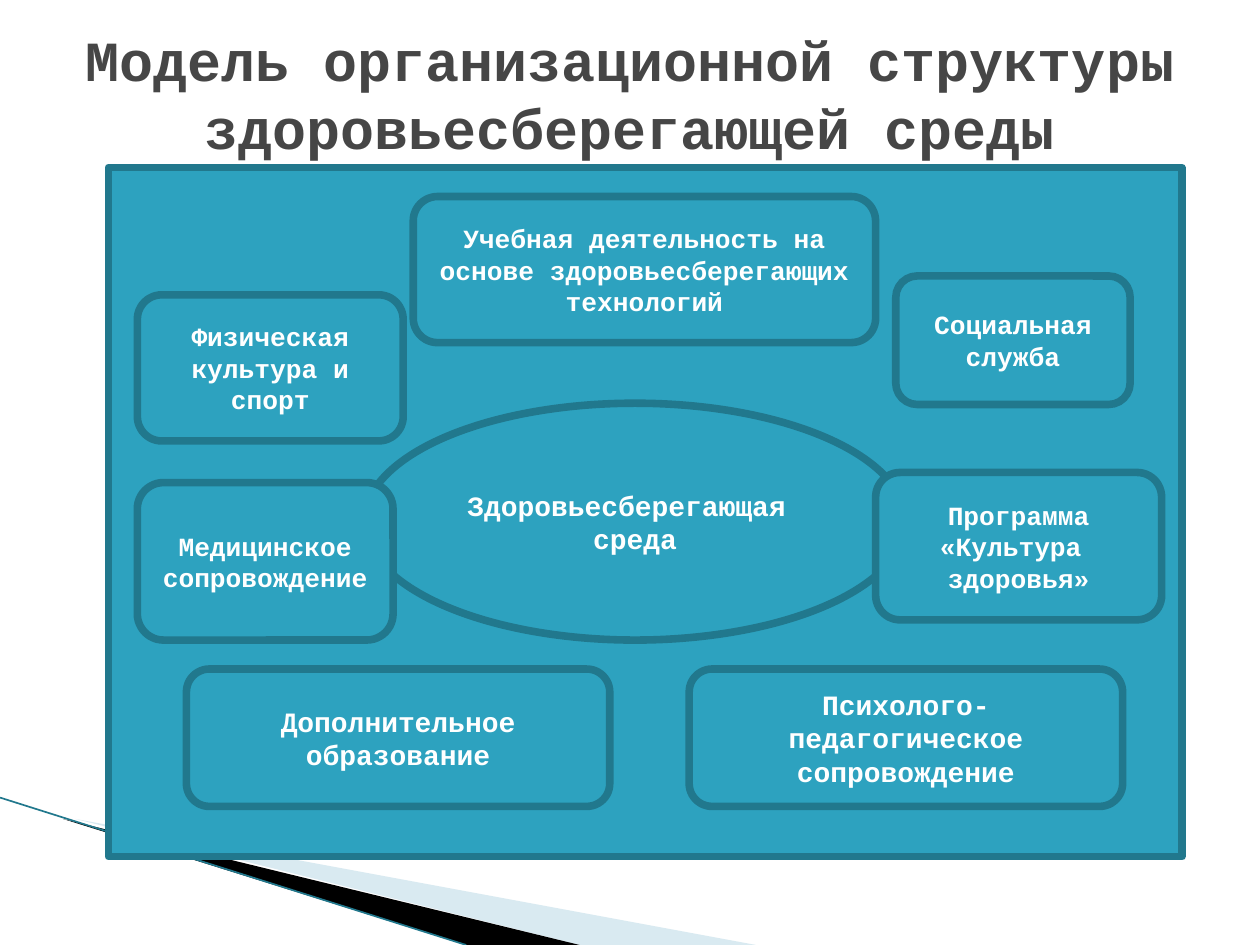
from dataclasses import dataclass

from lxml import etree
from pptx import Presentation
from pptx.dml.color import RGBColor
from pptx.enum.shapes import MSO_CONNECTOR, MSO_SHAPE
from pptx.enum.text import MSO_ANCHOR, PP_ALIGN
from pptx.oxml.ns import qn
from pptx.slide import Slide
from pptx.text.text import TextFrame
from pptx.util import Inches, Pt

RECT = MSO_SHAPE.RECTANGLE
ROUNDED = MSO_SHAPE.ROUNDED_RECTANGLE
OVAL = MSO_SHAPE.OVAL
STRAIGHT = MSO_CONNECTOR.STRAIGHT
CENTER = PP_ALIGN.CENTER
MIDDLE = MSO_ANCHOR.MIDDLE

# The slide is a grid of 100 columns by 75 rows
COLUMNS, ROWS = 100, 75
CELL = Inches(0.1)


@dataclass(frozen=True)
class Theme:
    font: str = "Courier New"
    title_color: str = "464646"
    label_color: str = "FFFFFF"
    fill: str = "2DA2BF"
    outline: str = "21788D"
    pale_wedge: str = "A0CBDC"
    dark_wedge: str = "000000"
    title_size: float = 32.4
    large: float = 16
    small: float = 15
    border: float = 4.33
    hairline: float = 0.95


THEME = Theme()


@dataclass(frozen=True)
class Block:
    """A labelled shape; place is left, top, width, height in grid cells."""
    place: tuple[float, float, float, float]
    label: str = ""
    size: float = THEME.small
    kind: MSO_SHAPE = ROUNDED


@dataclass(frozen=True)
class Wedge:
    corners: tuple[tuple[float, float], ...]
    color: str
    opacity: int = 100


WEDGES = [
    Wedge(((5.5, 65.1), (59.5, ROWS), (45.6, ROWS)), THEME.pale_wedge, 40),
    Wedge(((5.3, 64.9), (45.7, ROWS), (37.2, ROWS)), THEME.dark_wedge),
]

BOTTOM_TOP, BOTTOM_HEIGHT = 53.1, 10.9
LEFT_EDGE = 10.9

BLOCKS = [
    Block((8.6, 13.3, 85.2, 54.7), kind=RECT),
    Block((28.9, 32, 43, 18.8), "Здоровьесберегающая \vсреда", THEME.large, OVAL),
    Block((71.1, 21.9, 18.6, 10.2), "Социальная служба"),
    Block((69.5, 37.5, 22.7, 11.7), "Программа «Культура  здоровья»"),
    Block((54.7, BOTTOM_TOP, 34.4, BOTTOM_HEIGHT),
          "Психолого-педагогическое сопровождение", THEME.large),
    Block((14.8, BOTTOM_TOP, 33.6, BOTTOM_HEIGHT),
          "Дополнительное образование", THEME.large),
    Block((LEFT_EDGE, 38.3, 20.3, 12.5), "Медицинское сопровождение"),
    Block((LEFT_EDGE, 23.4, 21.1, 11.6), "Физическая культура и спорт"),
    Block((32.8, 15.6, 36.7, 11.6),
          "Учебная деятельность на основе здоровьесберегающих технологий"),
]


def cells(*counts: float) -> list[int]:
    return [round(count * CELL) for count in counts]


def rgb(color: str) -> RGBColor:
    return RGBColor.from_string(color)


def write(frame: TextFrame, words: str, size: float, color: str) -> None:
    frame.word_wrap = True
    frame.vertical_anchor = MIDDLE
    paragraph = frame.paragraphs[0]
    paragraph.alignment = CENTER
    for index, line in enumerate(words.split("\v")):
        if index:
            paragraph.add_line_break()
        run = paragraph.add_run()
        run.text = line
        run.font.name = THEME.font
        run.font.size = Pt(size)
        run.font.bold = True
        run.font.color.rgb = rgb(color)


def draw_wedge(slide: Slide, wedge: Wedge) -> None:
    start, *others = wedge.corners
    builder = slide.shapes.build_freeform(*start, scale=CELL)
    builder.add_line_segments(others, close=True)
    shape = builder.convert_to_shape()
    shape.shadow.inherit = False
    shape.line.fill.background()
    shape.fill.solid()
    shape.fill.fore_color.rgb = rgb(wedge.color)
    if wedge.opacity < 100:
        tint = shape.fill._xPr.find(".//" + qn("a:srgbClr"))
        etree.SubElement(tint, qn("a:alpha"), val=str(wedge.opacity * 1000))


def draw_edge(slide: Slide) -> None:
    edge = slide.shapes.add_connector(STRAIGHT, *cells(0, 63.3, 37, ROWS))
    edge.line.color.rgb = rgb(THEME.outline)
    edge.line.width = Pt(THEME.hairline)
    etree.SubElement(edge._element.spPr, qn("a:effectLst"))


def draw_block(slide: Slide, block: Block) -> None:
    shape = slide.shapes.add_shape(block.kind, *cells(*block.place))
    shape.shadow.inherit = False
    shape.fill.solid()
    shape.fill.fore_color.rgb = rgb(THEME.fill)
    shape.line.color.rgb = rgb(THEME.outline)
    shape.line.width = Pt(THEME.border)
    if block.label:
        write(shape.text_frame, block.label, block.size, THEME.label_color)


def main() -> None:
    deck = Presentation()
    deck.slide_width, deck.slide_height = cells(COLUMNS, ROWS)
    slide = deck.slides.add_slide(deck.slide_layouts[6])

    # Corner decoration
    for wedge in WEDGES:
        draw_wedge(slide, wedge)
    draw_edge(slide)

    # Title
    title = slide.shapes.add_textbox(*cells(5, 2, 90, 10.8))
    write(title.text_frame,
          "Модель организационной структуры здоровьесберегающей среды",
          THEME.title_size, THEME.title_color)

    # Panel, centre and surrounding services
    for block in BLOCKS:
        draw_block(slide, block)

    deck.save("out.pptx")


if __name__ == "__main__":
    main()
